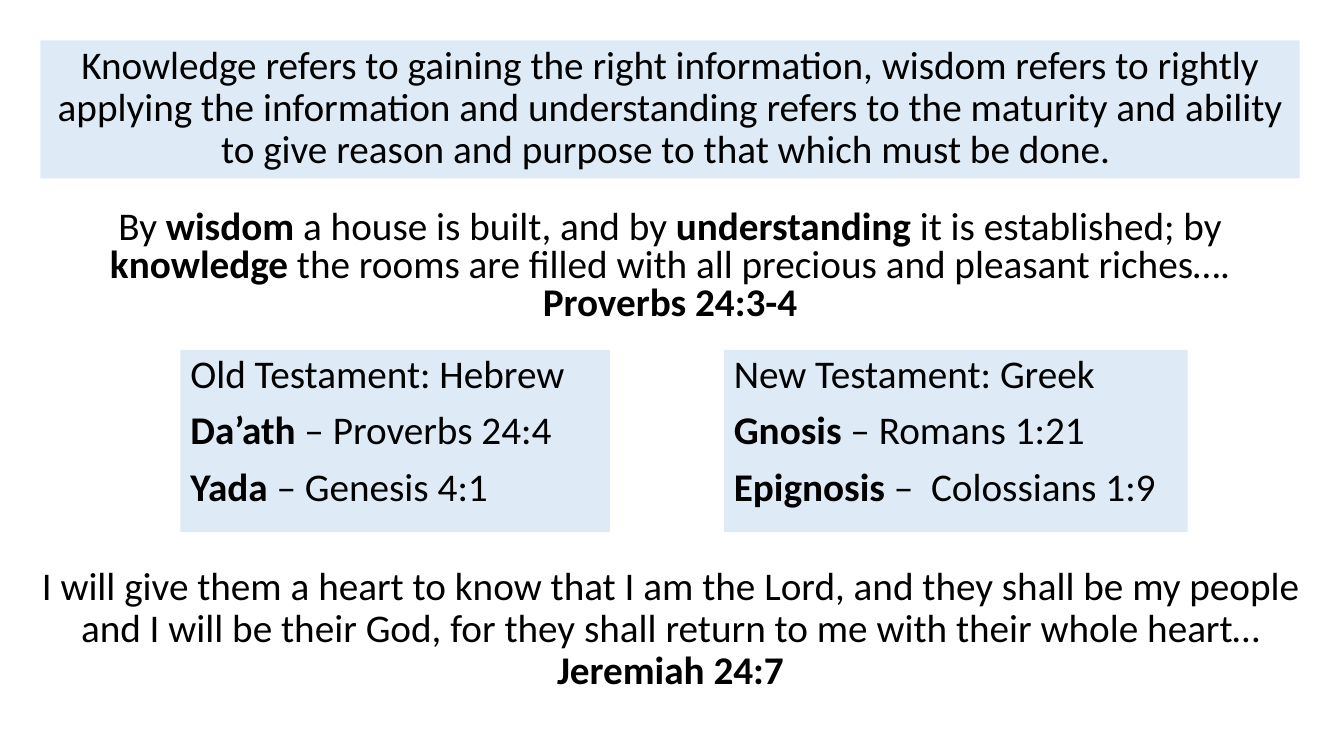
from dataclasses import dataclass
from typing import Optional

import pptx
import pptx.dml.color
import pptx.enum.shapes
import pptx.enum.text
import pptx.util

Inches = pptx.util.Inches
Pt = pptx.util.Pt
Align = pptx.enum.text.PP_ALIGN

BLACK = pptx.dml.color.RGBColor(0x00, 0x00, 0x00)
PALE_BLUE = pptx.dml.color.RGBColor(0xDE, 0xEB, 0xF7)

FONT_FORMAT = {"name": "Calibri", "size": Pt(28)}
FRAME_FORMAT = {
    "word_wrap": True,
    "auto_size": pptx.enum.text.MSO_AUTO_SIZE.NONE,
    "vertical_anchor": pptx.enum.text.MSO_ANCHOR.TOP,
}


@dataclass(frozen=True)
class Passage:
    """A block of text; words between asterisks are bold."""
    left: float
    top: float
    width: float
    height: float
    lines: tuple[str, ...]
    fill: Optional[pptx.dml.color.RGBColor] = None
    alignment: Align = Align.CENTER
    line_spacing: float = 0.9


TESTAMENT_TOP, TESTAMENT_HEIGHT = 3.47, 1.81

PASSAGES = (
    Passage(0.4, 0.4, 12.49, 1.37, (
        "Knowledge refers to gaining the right information, wisdom refers to "
        "rightly applying the information and understanding refers to the "
        "maturity and ability to give reason and purpose to that which must "
        "be done. ",
    ), fill=PALE_BLUE),
    Passage(1.79, TESTAMENT_TOP, 4.26, TESTAMENT_HEIGHT, (
        "Old Testament: Hebrew",
        "*Da’ath *– Proverbs 24:4",
        "*Yada* – Genesis 4:1",
    ), fill=PALE_BLUE, alignment=Align.LEFT),
    Passage(7.18, TESTAMENT_TOP, 4.6, TESTAMENT_HEIGHT, (
        "New Testament: Greek",
        "*Gnosis* – Romans 1:21",
        "*Epignosis* –  Colossians 1:9",
    ), fill=PALE_BLUE, alignment=Align.LEFT),
    Passage(0.25, 5.57, 12.8, 1.67, (
        "I will give them a heart to know that I am the Lord, and they shall "
        "be my people and I will be their God, for they shall return to me "
        "with their whole heart… *Jeremiah 24:7*",
    )),
    Passage(0.4, 2.04, 12.49, 1.36, (
        "By *wisdom* a house is built, and by *understanding* it is "
        "established; by *knowledge* the rooms are filled with all precious "
        "and pleasant riches…. *Proverbs 24:3-4*",
    ), line_spacing=0.8),
)


def apply_format(target: object, values: dict) -> None:
    for name, value in values.items():
        setattr(target, name, value)


def write_line(paragraph, line: str, passage: Passage) -> None:
    apply_format(paragraph, {
        "alignment": passage.alignment,
        "line_spacing": passage.line_spacing,
        "space_before": Pt(10),
    })
    for index, text in enumerate(line.split("*")):
        if text:
            run = paragraph.add_run()
            run.text = text
            apply_format(run.font, FONT_FORMAT | {"bold": index % 2 == 1})
            run.font.color.rgb = BLACK


def draw_passage(slide, passage: Passage) -> None:
    bounds = [Inches(length) for length in
              (passage.left, passage.top, passage.width, passage.height)]
    if passage.fill is None:
        shape = slide.shapes.add_textbox(*bounds)
    else:
        shape = slide.shapes.add_shape(
            pptx.enum.shapes.MSO_SHAPE.RECTANGLE, *bounds)
        shape.shadow.inherit = False
        shape.fill.solid()
        shape.fill.fore_color.rgb = passage.fill
        shape.line.fill.background()
    frame = shape.text_frame
    apply_format(frame, FRAME_FORMAT)
    for index, line in enumerate(passage.lines):
        paragraph = frame.add_paragraph() if index else frame.paragraphs[0]
        write_line(paragraph, line, passage)


def main() -> None:
    presentation = pptx.Presentation()
    presentation.slide_width = Inches(13.33)
    presentation.slide_height = Inches(7.5)
    slide = presentation.slides.add_slide(presentation.slide_layouts[6])
    for passage in PASSAGES:
        draw_passage(slide, passage)
    presentation.save("out.pptx")


if __name__ == "__main__":
    main()
